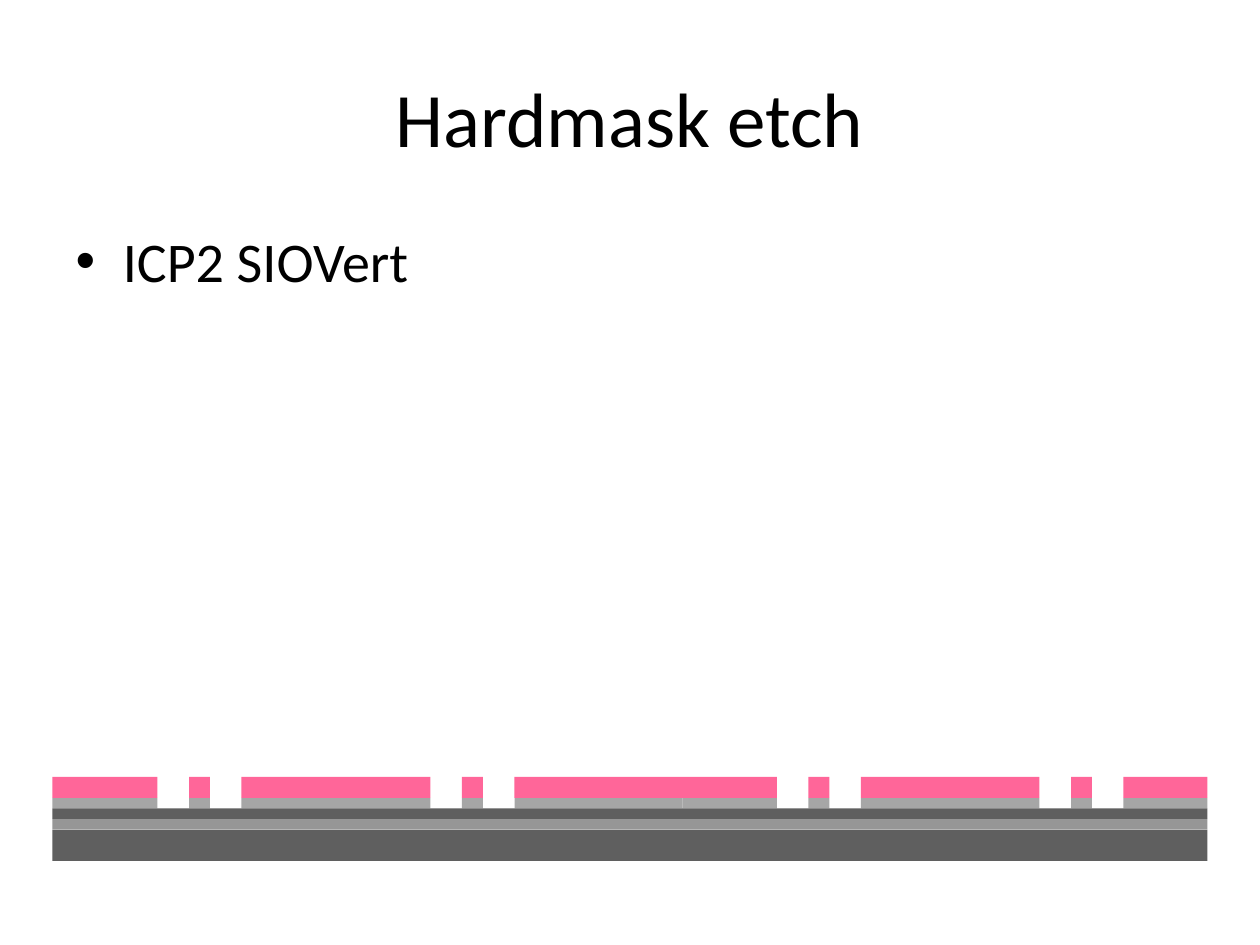
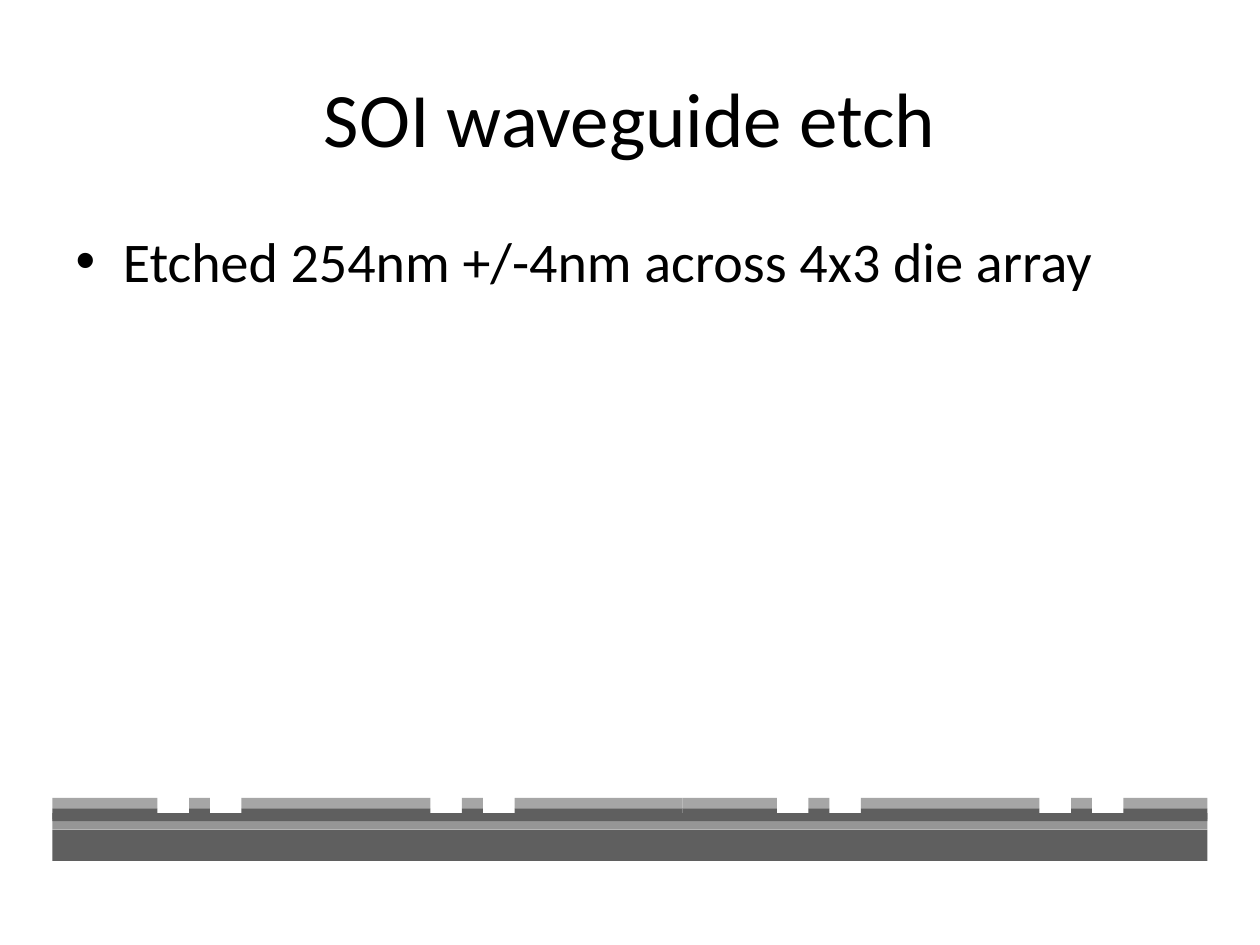
from dataclasses import dataclass

from pptx import Presentation
from pptx.dml.color import RGBColor
from pptx.enum.shapes import MSO_SHAPE
from pptx.enum.text import MSO_ANCHOR, PP_ALIGN
from pptx.util import Inches, Pt

RECTANGLE = MSO_SHAPE.RECTANGLE
CENTER, LEFT = PP_ALIGN.CENTER, PP_ALIGN.LEFT
MIDDLE, TOP = MSO_ANCHOR.MIDDLE, MSO_ANCHOR.TOP


@dataclass(frozen=True)
class Theme:
    font: str = "Calibri"
    text: str = "000000"
    title_size: int = 44
    body_size: int = 32
    silicon: str = "5F5F5F"
    oxide: str = "969696"
    hardmask: str = "A6A6A6"
    resist: str = "FF6699"


THEME = Theme()
SLIDE_WIDTH, SLIDE_HEIGHT = 10, 7.5

# Wafer grid: 12 cells to the inch
CELLS_PER_INCH = 12
WAFER_LEFT, WAFER_WIDTH = 5, 110
TRENCH = 3
# Widths of the ridges between trenches; the middle one has two abutting parts
RIDGES = [(10,), (2,), (18,), (2,), (16, 9), (2,), (17,), (2,), (8,)]
WHOLE_RIDGES = [(sum(parts),) for parts in RIDGES]
FULL_WIDTH = [(WAFER_WIDTH,)]

# Layers: (top row, height in rows, colour, ridge pattern)
BASE = [
    (79, 3, THEME.silicon, FULL_WIDTH),
    (78, 1, THEME.oxide, FULL_WIDTH),
    (76, 1, THEME.hardmask, RIDGES),
]
SLIDES = [
    {
        "title": "Hardmask etch",
        "bullets": ["ICP2 SIOVert"],
        "layers": BASE + [
            (77, 1, THEME.silicon, FULL_WIDTH),
            (74, 2, THEME.resist, WHOLE_RIDGES),
        ],
    },
    {
        "title": "SOI waveguide etch",
        "bullets": ["Etched 254nm +/-4nm across 4x3 die array"],
        "layers": BASE + [
            (77, 1, THEME.silicon, RIDGES),
            (77.45, 0.75, THEME.silicon, FULL_WIDTH),  # silicon left under the trenches
        ],
    },
]

# Placeholder frames as shares of the slide: left, top, width, height
TITLE_STYLE = {"frame": (0.05, 0.04, 0.9, 1 / 6), "size": THEME.title_size,
               "alignment": CENTER, "anchor": MIDDLE}
BODY_STYLE = {"frame": (0.05, 0.7 / 3, 0.9, 0.66), "size": THEME.body_size,
              "alignment": LEFT, "anchor": TOP}


def set_attributes(target, values):
    for name, value in values.items():
        setattr(target, name, value)


def fill_placeholder(shape, lines, style):
    left, top, width, height = style["frame"]
    set_attributes(shape, {
        "left": Inches(left * SLIDE_WIDTH), "top": Inches(top * SLIDE_HEIGHT),
        "width": Inches(width * SLIDE_WIDTH), "height": Inches(height * SLIDE_HEIGHT),
    })
    frame = shape.text_frame
    frame.text = "\n".join(lines)
    frame.vertical_anchor = style["anchor"]
    for paragraph in frame.paragraphs:
        paragraph.alignment = style["alignment"]
        for run in paragraph.runs:
            set_attributes(run.font, {"name": THEME.font, "size": Pt(style["size"])})
            run.font.color.rgb = RGBColor.from_string(THEME.text)


def add_block(slide, cells, color):
    box = [Inches(cell / CELLS_PER_INCH) for cell in cells]
    shape = slide.shapes.add_shape(RECTANGLE, *box)
    shape.shadow.inherit = False
    shape.fill.solid()
    shape.fill.fore_color.rgb = RGBColor.from_string(color)
    shape.line.fill.background()


def add_layer(slide, top, height, color, ridges):
    left = WAFER_LEFT
    for parts in ridges:
        for width in parts:
            add_block(slide, (left, top, width, height), color)
            left += width
        left += TRENCH


def main():
    presentation = Presentation()
    presentation.slide_width = Inches(SLIDE_WIDTH)
    presentation.slide_height = Inches(SLIDE_HEIGHT)
    title_and_content = presentation.slide_layouts[1]
    for content in SLIDES:
        slide = presentation.slides.add_slide(title_and_content)
        fill_placeholder(slide.shapes.title, [content["title"]], TITLE_STYLE)
        fill_placeholder(slide.placeholders[1], content["bullets"], BODY_STYLE)
        for layer in content["layers"]:
            add_layer(slide, *layer)
    presentation.save("out.pptx")


if __name__ == "__main__":
    main()
